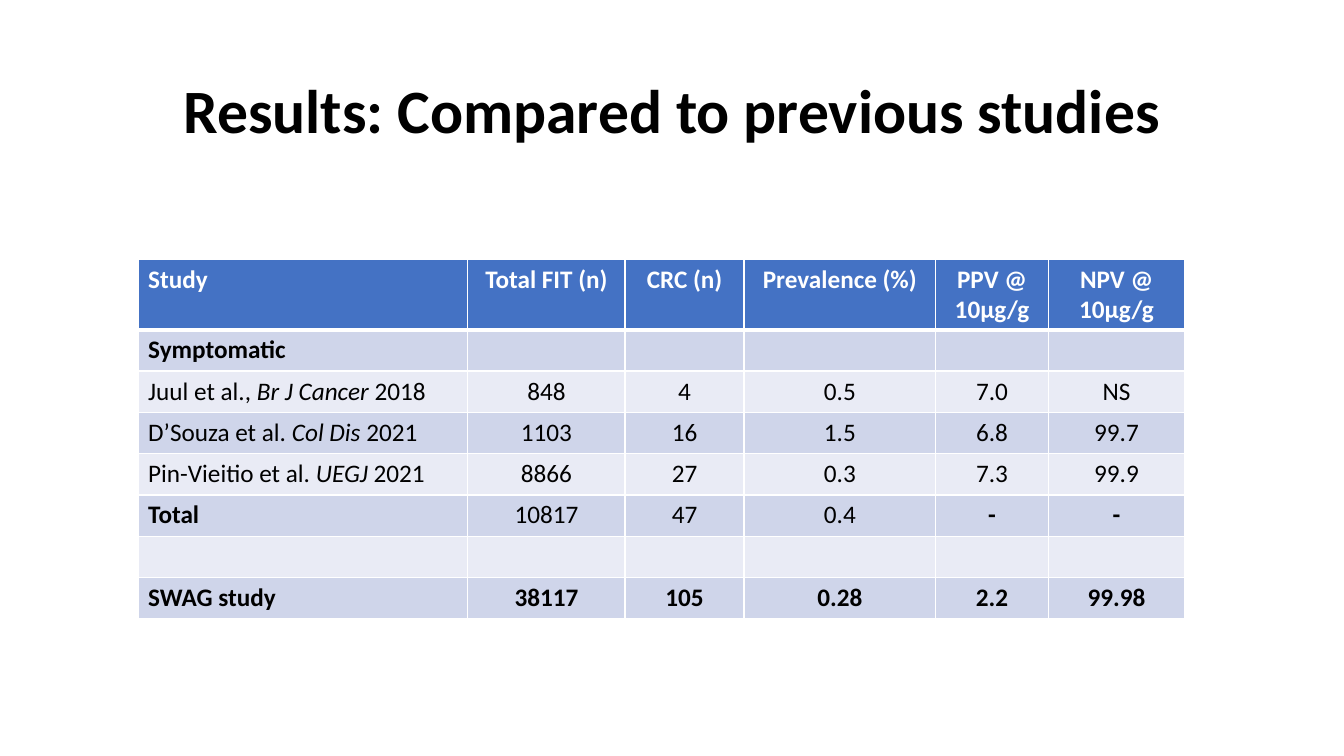
from lxml import etree
from pptx import Presentation
from pptx.dml.color import RGBColor
from pptx.enum.text import MSO_ANCHOR, PP_ALIGN
from pptx.oxml.ns import qn
from pptx.util import Inches, Pt

CENTER = PP_ALIGN.CENTER
LEFT = PP_ALIGN.LEFT
MIDDLE = MSO_ANCHOR.MIDDLE

FONT = "Calibri"
COLORS = {
    "head": "4472C4",
    "dark": "CFD5EA",
    "light": "E9EBF5",
    "white": "FFFFFF",
    "black": "000000",
}
WIDTHS = [3.27, 1.56, 1.18, 1.9, 1.12, 1.35]
HEAD_HEIGHT = 0.7
ROW_HEIGHT = 0.41
# Asterisks enclose italic text.
STUDIES = [
    ["Study", "Total FIT (n)", "CRC (n)", "Prevalence (%)", "PPV @ 10µg/g", "NPV @ 10µg/g"],
    ["Symptomatic", "", "", "", "", ""],
    ["Juul et al., *Br J Cancer* 2018", "848", "4", "0.5", "7.0", "NS"],
    ["D’Souza et al. *Col Dis *2021", "1103", "16", "1.5", "6.8", "99.7"],
    ["Pin-Vieitio et al. *UEGJ* 2021", "8866", "27", "0.3", "7.3", "99.9"],
    ["Total", "10817", "47", "0.4", "-", "-"],
    ["", "", "", "", "", ""],
    ["SWAG study", "38117", "105", "0.28", "2.2", "99.98"],
]
BOLD_ROWS = {0, len(STUDIES) - 1}
BOLD_WORDS = {"Symptomatic", "Total", "-"}


def style(font, size, color, bold):
    font.name = FONT
    font.size = Pt(size)
    font.bold = bold
    font.color.rgb = RGBColor.from_string(COLORS[color])


def add_title(slide, text):
    box = slide.shapes.add_textbox(Inches(0.92), Inches(0.4), Inches(11.5), Inches(1.45))
    frame = box.text_frame
    frame.word_wrap = True
    frame.vertical_anchor = MIDDLE
    frame.text = text
    para = frame.paragraphs[0]
    para.alignment = CENTER
    para.line_spacing = 0.9
    style(para.runs[0].font, 44, "black", True)


def set_border(cell, top, bottom):
    props = cell._tc.get_or_add_tcPr()
    sides = {"a:lnL": 1, "a:lnR": 1, "a:lnT": top, "a:lnB": bottom}
    for index, (side, width) in enumerate(sides.items()):
        line = etree.Element(qn(side), w=str(Pt(width)))
        fill = etree.SubElement(line, qn("a:solidFill"))
        etree.SubElement(fill, qn("a:srgbClr"), val=COLORS["white"])
        props.insert(index, line)


def fill_cell(cell, text, row, col):
    band = "head" if row == 0 else "dark" if row % 2 else "light"
    cell.fill.solid()
    cell.fill.fore_color.rgb = RGBColor.from_string(COLORS[band])
    set_border(cell, 3 if row == 1 else 1, 3 if row == 0 else 1)
    para = cell.text_frame.paragraphs[0]
    para.alignment = CENTER if col else LEFT
    color = "black" if row else "white"
    bold = row in BOLD_ROWS or text in BOLD_WORDS
    if not text:
        style(para.font, 18, color, bold)
        return
    for index, part in enumerate(text.split("*")):
        run = para.add_run()
        run.text = part
        style(run.font, 18, color, bold)
        run.font.italic = index % 2 == 1


def add_studies(slide):
    height = HEAD_HEIGHT + ROW_HEIGHT * (len(STUDIES) - 1)
    frame = slide.shapes.add_table(
        len(STUDIES), len(WIDTHS), Inches(1.37), Inches(2.57), Inches(sum(WIDTHS)), Inches(height)
    )
    table = frame.table
    for column, width in zip(table.columns, WIDTHS):
        column.width = Inches(width)
    for row, texts in enumerate(STUDIES):
        table.rows[row].height = Inches(ROW_HEIGHT if row else HEAD_HEIGHT)
        for col, text in enumerate(texts):
            fill_cell(table.cell(row, col), text, row, col)


def main():
    deck = Presentation()
    deck.slide_width = Inches(13.33)
    deck.slide_height = Inches(7.5)
    slide = deck.slides.add_slide(deck.slide_layouts[6])
    add_title(slide, "Results: Compared to previous studies")
    add_studies(slide)
    deck.save("out.pptx")


if __name__ == "__main__":
    main()
